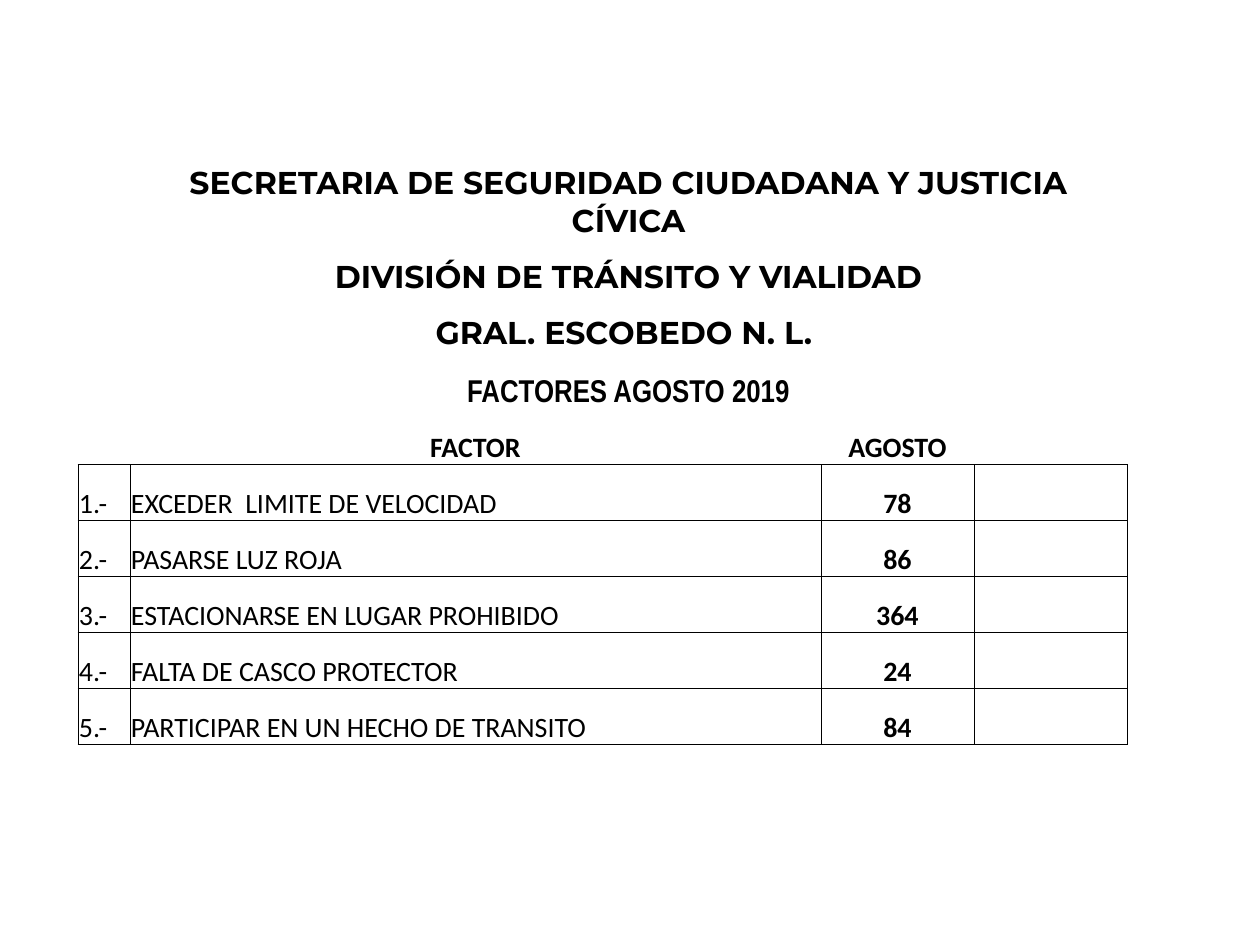
from lxml import etree
from pptx import Presentation
from pptx.dml.color import RGBColor
from pptx.enum.text import MSO_ANCHOR, PP_ALIGN
from pptx.oxml.ns import qn
from pptx.util import Emu, Pt

LEFT, CENTER = PP_ALIGN.LEFT, PP_ALIGN.CENTER
BOTTOM = MSO_ANCHOR.BOTTOM
SCALE = 914400 // 126
BLACK = "000000"

# Content
TITLES = [
    ("SECRETARIA DE SEGURIDAD CIUDADANA Y JUSTICIA CÍVICA", "Montserrat"),
    ("DIVISIÓN DE TRÁNSITO Y VIALIDAD", "Montserrat"),
    ("GRAL. ESCOBEDO N. L. ", "Montserrat"),
    ("FACTORES AGOSTO 2019", "Arial Narrow"),
]
HEADINGS = ["", "FACTOR", "AGOSTO", ""]
FACTORS = [
    ("EXCEDER  LIMITE DE VELOCIDAD", 78),
    ("PASARSE LUZ ROJA", 86),
    ("ESTACIONARSE EN LUGAR PROHIBIDO", 364),
    ("FALTA DE CASCO PROTECTOR", 24),
    ("PARTICIPAR EN UN HECHO DE TRANSITO", 84),
]

# Layout in px
PAGE_SIZE = (1260, 945)
TABLE_LEFT, TABLE_TOP = 78, 163
COLUMN_WIDTHS = [52, 691, 153, 153]
FIRST_ROW_HEIGHT, ROW_HEIGHT = 77, 56


def px(length):
    return Emu(length * SCALE)


def color(value):
    return RGBColor.from_string(value)


def write(cell, text, font="Calibri", size=16, bold=False, align=LEFT):
    para = cell.text_frame.paragraphs[0]
    para.alignment = align
    span = para.add_run()
    span.text = text
    span.font.name = font
    span.font.size = Pt(size)
    span.font.bold = bold
    span.font.color.rgb = color(BLACK)


def set_borders(cell, visible_sides):
    properties = cell._tc.get_or_add_tcPr()
    for side in "LRTB":
        line = etree.SubElement(properties, qn(f"a:ln{side}"), w=str(Pt(0.5)))
        if side in visible_sides:
            fill = etree.SubElement(line, qn("a:solidFill"))
            etree.SubElement(fill, qn("a:srgbClr"), val=BLACK)
        else:
            etree.SubElement(line, qn("a:noFill"))


def main():
    deck = Presentation()
    deck.slide_width, deck.slide_height = map(px, PAGE_SIZE)
    page = deck.slides.add_slide(deck.slide_layouts[6])

    # Table grid
    heading_row = len(TITLES)
    row_count = heading_row + 1 + len(FACTORS)
    heights = [FIRST_ROW_HEIGHT] + [ROW_HEIGHT] * (row_count - 1)
    table = page.shapes.add_table(
        row_count, len(COLUMN_WIDTHS), px(TABLE_LEFT), px(TABLE_TOP),
        px(sum(COLUMN_WIDTHS)), px(sum(heights))).table
    table.first_row = table.horz_banding = False
    for column, width in zip(table.columns, COLUMN_WIDTHS):
        column.width = px(width)

    # Cell borders, insets and fill
    for row_index, row in enumerate(table.rows):
        row.height = px(heights[row_index])
        if row_index < heading_row:
            sides = ""
        else:
            sides = "B" if row_index == heading_row else "LRTB"
        for cell in row.cells:
            set_borders(cell, sides)
            cell.fill.background()
            cell.vertical_anchor = BOTTOM
            cell.margin_left = cell.margin_right = cell.margin_top = px(1)
            cell.margin_bottom = 0

    # Title rows, merged across the last three columns
    for row_index, (text, font) in enumerate(TITLES):
        title = table.cell(row_index, 1)
        title.merge(table.cell(row_index, 3))
        write(title, text, font=font, size=18, bold=True, align=CENTER)

    # Column headings
    for column_index, text in enumerate(HEADINGS):
        if text:
            write(table.cell(heading_row, column_index), text, bold=True, align=CENTER)

    # Numbered factors
    for number, (factor, count) in enumerate(FACTORS, 1):
        row_index = heading_row + number
        write(table.cell(row_index, 0), f"{number}.-")
        write(table.cell(row_index, 1), factor)
        write(table.cell(row_index, 2), str(count), bold=True, align=CENTER)

    deck.save("out.pptx")


if __name__ == "__main__":
    main()
